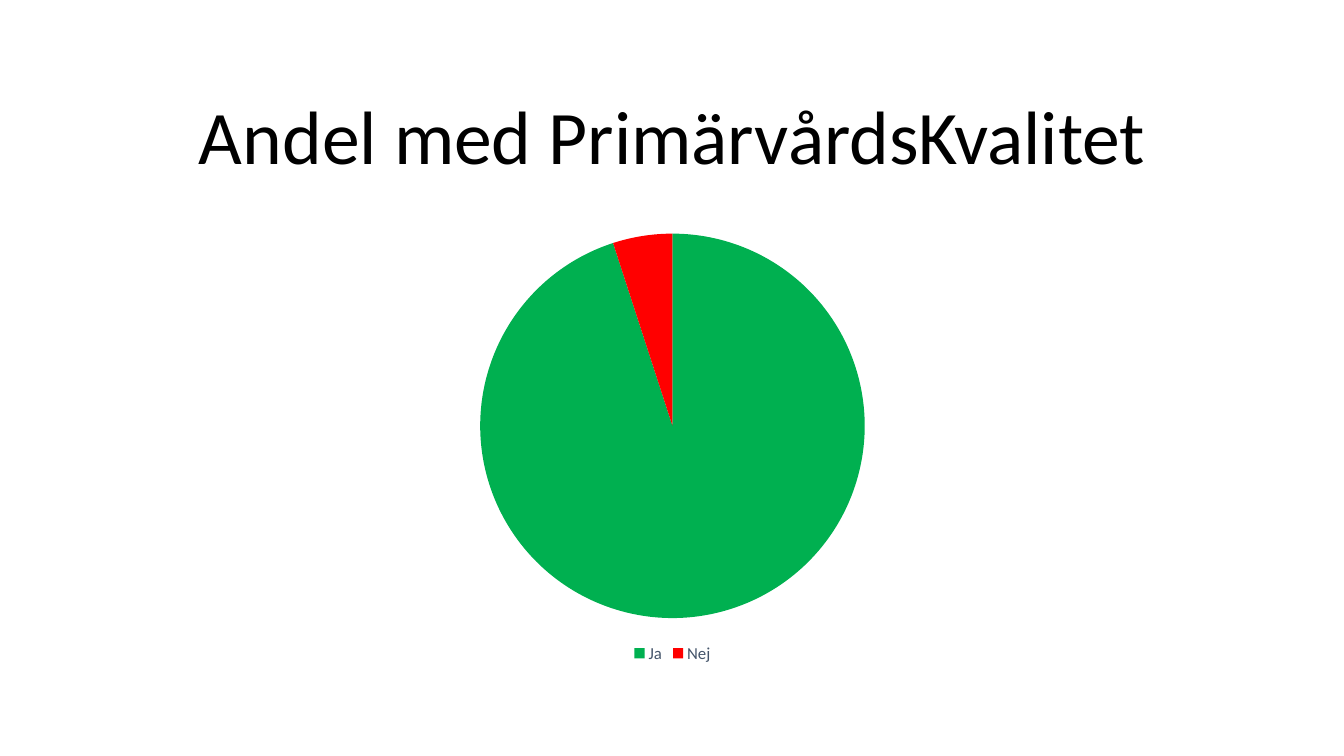
from pptx import Presentation
from pptx.chart.data import CategoryChartData
from pptx.dml.color import RGBColor
from pptx.enum.chart import XL_CHART_TYPE as ChartType, XL_LEGEND_POSITION as LegendPosition
from pptx.enum.text import MSO_ANCHOR as Anchor, MSO_AUTO_SIZE as AutoSize, PP_ALIGN as Align
from pptx.util import Inches, Pt

FONT = "Calibri"
SHARES = {"Ja": (95, "00B050"), "Nej": (5, "FF0000")}


def color(value):
    return RGBColor.from_string(value)


def format_font(font, size, value):
    font.name = FONT
    font.size = Pt(size)
    font.color.rgb = color(value)


def place_title(slide, left, top, width, height):
    title = slide.shapes.title
    title.left, title.top = Inches(left), Inches(top)
    title.width, title.height = Inches(width), Inches(height)
    text_frame = title.text_frame
    text_frame.text = "Andel med PrimärvårdsKvalitet"
    text_frame.word_wrap = True
    text_frame.auto_size = AutoSize.NONE
    text_frame.vertical_anchor = Anchor.BOTTOM
    paragraph = text_frame.paragraphs[0]
    paragraph.alignment = Align.CENTER
    paragraph.line_spacing = 0.9
    format_font(paragraph.runs[0].font, 54, "000000")


def add_share_pie(slide, left, top, width, height):
    data = CategoryChartData()
    data.categories = list(SHARES)
    data.add_series("Andel", [share for share, _ in SHARES.values()])
    chart = slide.shapes.add_chart(
        ChartType.PIE, Inches(left), Inches(top), Inches(width), Inches(height), data
    ).chart
    format_font(chart.font, 10, "000000")
    chart.has_title = False
    chart.has_legend = True
    chart.legend.position = LegendPosition.BOTTOM
    chart.legend.include_in_layout = False
    format_font(chart.legend.font, 12, "44546A")
    plot = chart.plots[0]
    plot.vary_by_categories = True
    for index, (_, fill_color) in enumerate(SHARES.values()):
        point_format = plot.series[0].points[index].format
        point_format.fill.solid()
        point_format.fill.fore_color.rgb = color(fill_color)
        point_format.line.fill.background()


def main():
    presentation = Presentation()
    presentation.slide_width = Inches(13.33)
    presentation.slide_height = Inches(7.5)
    slide = presentation.slides.add_slide(presentation.slide_layouts[5])
    place_title(slide, 1.67, 0.28, 10, 1.56)
    add_share_pie(slide, 3.06, 2.18, 7.22, 4.44)
    presentation.save("out.pptx")


if __name__ == "__main__":
    main()
